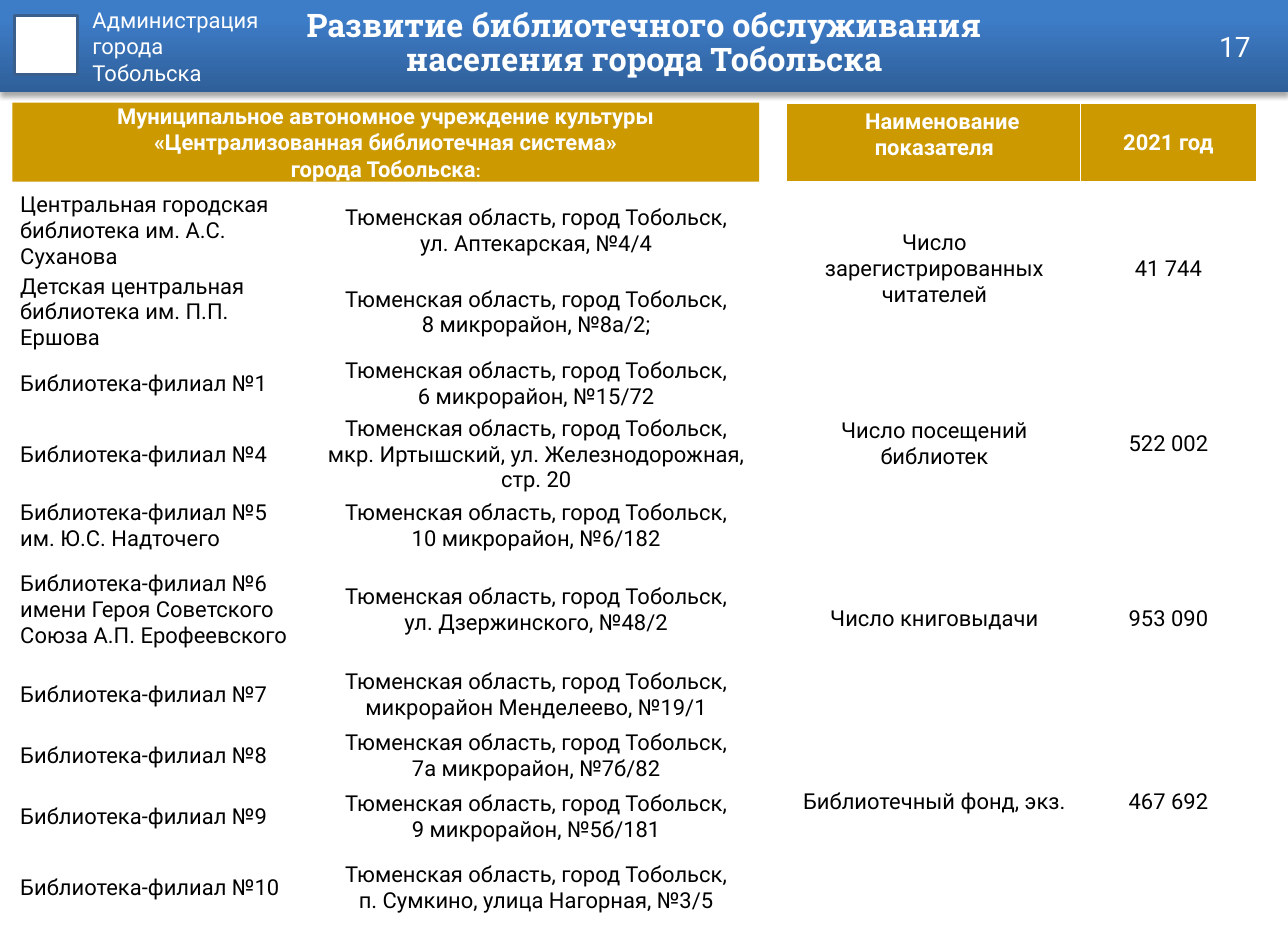
from lxml import etree
from pptx import Presentation
from pptx import util as u
from pptx.dml.color import RGBColor
from pptx.enum import shapes, text
from pptx.oxml import ns

PX = 9144  # one px is 1/100 inch
WHITE, BLACK, GOLD = "FFFFFF", "000000", "CC9900"
LEFT, CENTER, RIGHT = text.PP_ALIGN.LEFT, text.PP_ALIGN.CENTER, text.PP_ALIGN.RIGHT
TOP, MIDDLE = text.MSO_ANCHOR.TOP, text.MSO_ANCHOR.MIDDLE

TITLE = "Развитие библиотечного обслуживания населения города Тобольска"
OWNER = "Администрация\nгорода\nТобольска"
PAGE = "17"
LIBRARY_SYSTEM = ("Муниципальное автономное учреждение культуры\v"
                  "«Централизованная библиотечная система»\nгорода Тобольска")
CITY = "Тюменская область, город Тобольск,"
LIBRARIES = [  # name, address, row height
    ("Центральная городская библиотека им. А.С. Суханова", "ул. Аптекарская, №4/4", 72),
    ("Детская центральная библиотека им. П.П. Ершова", "8 микрорайон, №8а/2;", 72),
    ("Библиотека-филиал №1", "6 микрорайон, №15/72", 54),
    ("Библиотека-филиал №4", "мкр. Иртышский, ул. Железнодорожная, стр. 20", 72),
    ("Библиотека-филиал №5\nим. Ю.С. Надточего", "10 микрорайон, №6/182", 54),
    ("Библиотека-филиал №6 имени Героя Советского Союза А.П. Ерофеевского",
     "ул. Дзержинского, №48/2", 96),
    ("Библиотека-филиал №7", "микрорайон Менделеево, №19/1", 54),
    ("Библиотека-филиал №8", "7а микрорайон, №7б/82", 54),
    ("Библиотека-филиал №9", "9 микрорайон, №5б/181", 54),
    ("Библиотека-филиал №10", "п. Сумкино, улица Нагорная, №3/5", 72),
]
INDICATORS = [  # name, value, row height
    ("Наименование показателя", "2021 год", 69),
    ("Число зарегистрированных читателей", "41 744", 155),
    ("Число посещений библиотек", "522 002", 155),
    ("Число книговыдачи", "953 090", 155),
    ("Библиотечный фонд, экз.", "467 692", 170),
]


def rgb(color):
    return RGBColor.from_string(color)


def px(*lengths):
    return [u.Emu(length * PX) for length in lengths]


def set_margins(holder, horizontal, vertical):
    for side, length in zip(("left", "right", "top", "bottom"),
                            px(horizontal, horizontal, vertical, vertical)):
        setattr(holder, "margin_" + side, length)


def format_font(font, color, size=14, bold=False, name="Roboto"):
    values = {"name": name, "size": u.Pt(size), "bold": bold}
    for key, value in values.items():
        setattr(font, key, value)
    font.color.rgb = rgb(color)


def write(frame, content, color, align=LEFT, **font):
    frame.text = content
    for paragraph in frame.paragraphs:
        paragraph.alignment = align
        for run in paragraph.runs:
            format_font(run.font, color, **font)


def add_rectangle(slide, box, kind=shapes.MSO_SHAPE.RECTANGLE):
    shape = slide.shapes.add_shape(kind, *px(*box))
    shape.shadow.inherit = False
    shape.line.fill.background()
    return shape


def add_label(slide, box, content, anchor, **style):
    label = slide.shapes.add_textbox(*px(*box))
    frame = label.text_frame
    frame.word_wrap, frame.vertical_anchor = True, anchor
    set_margins(frame, 11, 6)
    write(frame, content, WHITE, **style)
    return label


def add_table(slide, left, top, widths, heights, rows, aligns, margins, header=False):
    """Add an unfilled table, with a gold first row if header is set."""
    frame = slide.shapes.add_table(len(rows), len(widths),
                                   *px(left, top, sum(widths), sum(heights)))
    table = frame.table
    table.horz_banding = False
    for column, width in zip(table.columns, px(*widths)):
        column.width = width
    for row, height in zip(table.rows, px(*heights)):
        row.height = height
    for i, row in enumerate(rows):
        is_header = header and i == 0
        for j, content in enumerate(row):
            cell = table.cell(i, j)
            cell.vertical_anchor = MIDDLE
            set_margins(cell, *margins)
            if is_header:
                cell.fill.solid()
                cell.fill.fore_color.rgb = rgb(GOLD)
            else:
                cell.fill.background()
            write(cell.text_frame, content, WHITE if is_header else BLACK,
                  aligns[j], bold=is_header)
    return table


def add_banner(slide):
    banner = add_rectangle(slide, (0, 0, 1142, 82))
    banner.fill.gradient()
    banner.fill.gradient_angle = 90
    for stop, (position, color) in zip(banner.fill.gradient_stops,
                                       ((0, "2F5F99"), (0.8, "3D7CC7"))):
        stop.position, stop.color.rgb = position, rgb(color)
    effects = banner.element.spPr.find(ns.qn("a:effectLst"))
    shadow = etree.SubElement(effects, ns.qn("a:outerShdw"), blurRad=str(u.Pt(3.1)),
                              dist=str(u.Pt(1.8)), dir="5400000", rotWithShape="0")
    shade = etree.SubElement(shadow, ns.qn("a:srgbClr"), val=BLACK)
    etree.SubElement(shade, ns.qn("a:alpha"), val="35000")

    emblem = add_rectangle(slide, (13, 14, 56, 52))
    emblem.fill.solid()
    emblem.fill.fore_color.rgb = rgb(WHITE)
    emblem.line.color.rgb = rgb("3A5F8C")
    emblem.line.width = u.Pt(2)


def place_title(slide, below):
    title = slide.shapes.title
    title.left, title.top, title.width, title.height = px(232, 0, 678, 78)
    frame = title.text_frame
    write(frame, TITLE, WHITE, CENTER, size=20.7, bold=True, name="Roboto Slab")
    frame.auto_size = text.MSO_AUTO_SIZE.NONE
    frame.word_wrap, frame.vertical_anchor = True, MIDDLE
    set_margins(frame, 11, 6)
    frame.paragraphs[0].line_spacing = 0.9
    below.element.addnext(title.element)


def add_system_heading(slide):
    heading = add_rectangle(slide, (11, 91, 662, 70), shapes.MSO_SHAPE.ROUNDED_RECTANGLE)
    heading.adjustments[0] = 0
    heading.fill.solid()
    heading.fill.fore_color.rgb = rgb(GOLD)
    frame = heading.text_frame
    frame.vertical_anchor = MIDDLE
    set_margins(frame, 10, 5)
    write(frame, LIBRARY_SYSTEM, WHITE, CENTER, bold=True)
    colon = frame.paragraphs[-1].add_run()
    colon.text = ":"
    format_font(colon.font, WHITE, size=11, bold=True)


def main():
    presentation = Presentation()
    presentation.slide_width, presentation.slide_height = px(1142, 827)
    slide = presentation.slides.add_slide(presentation.slide_layouts[5])

    add_banner(slide)
    owner = add_label(slide, (71, 0, 268, 106), OWNER, TOP)
    place_title(slide, owner)

    names, streets, heights = zip(*LIBRARIES)
    addresses = [f"{CITY}\n{street}" for street in streets]
    add_table(slide, 11, 169, (267, 395), heights, list(zip(names, addresses)),
              (LEFT, CENTER), (7, 0))
    add_system_heading(slide)

    names, values, heights = zip(*INDICATORS)
    for left, width, column in ((697, 263, names), (958, 156, values)):
        table = add_table(slide, left, 92, (width,), heights, [(item,) for item in column],
                          (CENTER,), (10, 5), header=True)
        if column is names:
            heading = table.cell(0, 0)
            heading.vertical_anchor = TOP
            properties = heading.text_frame.paragraphs[0]._p.get_or_add_pPr()
            properties.set("indent", str(14 * PX))

    add_label(slide, (854, 19, 266, 44), PAGE, MIDDLE, align=RIGHT, size=18)
    presentation.save("out.pptx")


if __name__ == "__main__":
    main()
